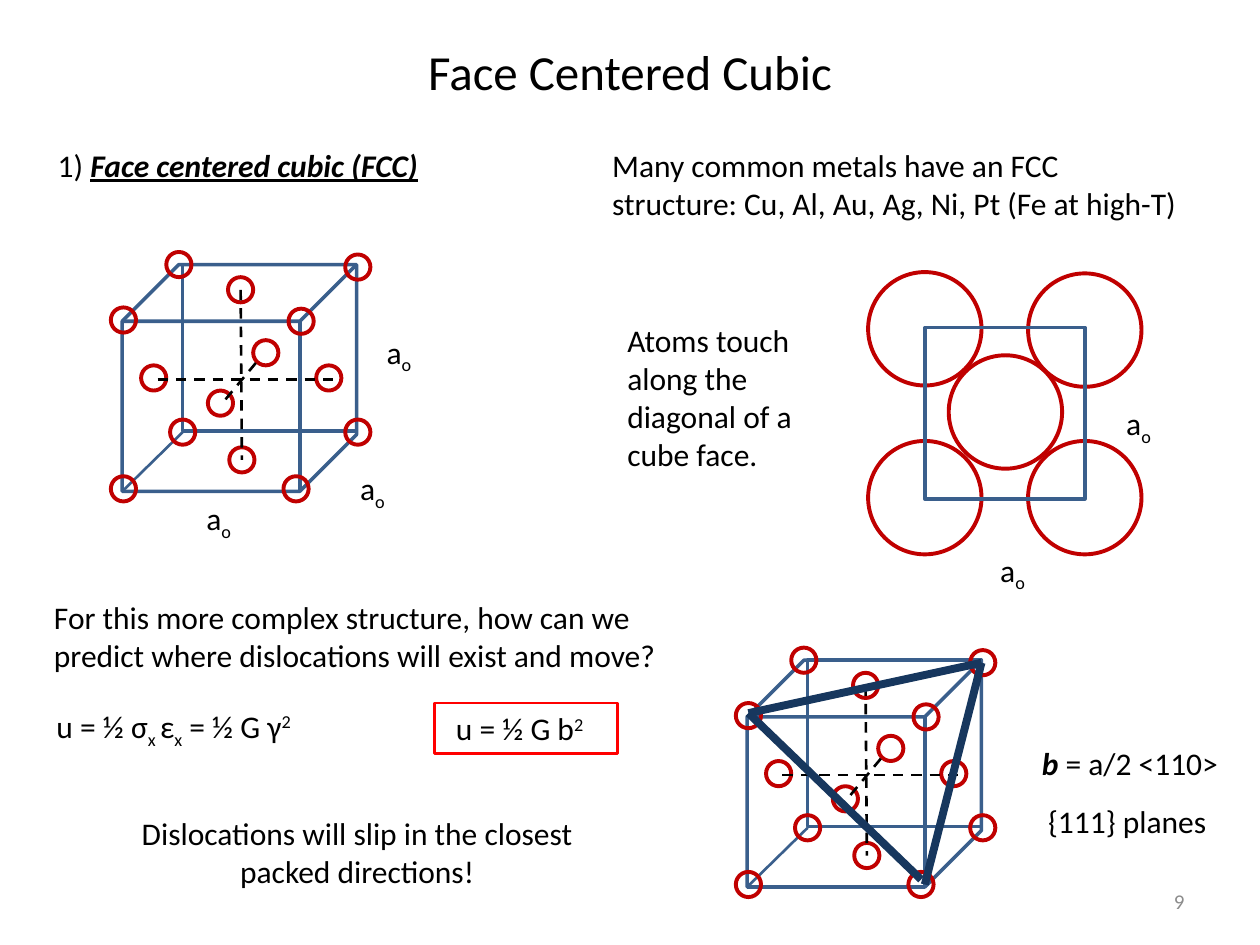
import pptx
import pptx.util
from pptx.dml.color import RGBColor
from pptx.enum.dml import MSO_LINE
from pptx.enum.shapes import MSO_CONNECTOR, MSO_SHAPE
from pptx.enum.text import MSO_ANCHOR, PP_ALIGN
from pptx.oxml.ns import qn
from lxml import etree

PX = 9144  # 100 px to the inch
BLACK = RGBColor(0x00, 0x00, 0x00)
GRAY = RGBColor(0x8C, 0x8C, 0x8C)
BLUE = RGBColor(0x3A, 0x5F, 0x8C)
NAVY = RGBColor(0x17, 0x37, 0x5E)
ATOM_RED = RGBColor(0xC0, 0x00, 0x00)
RED = RGBColor(0xFF, 0x00, 0x00)
CENTER = PP_ALIGN.CENTER
LINE = MSO_CONNECTOR.STRAIGHT
SUB, SUPER = {"baseline": -25000}, {"baseline": 30000}

deck = pptx.Presentation()
deck.slide_width, deck.slide_height = 1000 * PX, 750 * PX
page = deck.slides.add_slide(deck.slide_layouts[6])


def write(place, text, size=18, color=BLACK, align=PP_ALIGN.LEFT,
          anchor=MSO_ANCHOR.TOP, wrap=True, box=None, right=10):
    """Write a string, or a list of (string, format) pairs, into box or a new text box."""
    if box is None:
        box = page.shapes.add_textbox(*[n * PX for n in place])
    frame = box.text_frame
    frame.word_wrap, frame.vertical_anchor = wrap, anchor
    frame.margin_right = right * PX
    para = frame.paragraphs[0]
    para.alignment = align
    for words, form in [(text, {})] if isinstance(text, str) else text:
        span = para.add_run()
        span.text = words
        span.font.name, span.font.size = "Calibri", pptx.util.Pt(size)
        span.font.color.rgb = color
        for name in ("bold", "italic", "underline"):
            if name in form:
                setattr(span.font, name, form[name])
        if "baseline" in form:
            span._r.get_or_add_rPr().set("baseline", str(form["baseline"]))


def draw(shapes, kind, place, color, weight, dash=None):
    """Draw a line (x1, y1, x2, y2) or an unfilled shape (left, top, width, height)."""
    place = [n * PX for n in place]
    if kind is LINE:
        item = shapes.add_connector(kind, *place)
    else:
        item = shapes.add_shape(kind, *place)
        item.fill.background()
        item.shadow.inherit = False
    item.line.color.rgb = color
    item.line.width = pptx.util.Pt(weight)
    if dash:
        item.line.dash_style = dash
    if kind is LINE:
        etree.SubElement(item._element.spPr, qn("a:effectLst"))
    return item


write((0, 28, 1000, 57), "Face Centered Cubic", size=28, align=CENTER)
write((717, 695, 233, 40), "9", size=12, color=GRAY, align=PP_ALIGN.RIGHT,
      anchor=MSO_ANCHOR.MIDDLE)
write((36, 111, 309, 40),
      [("1) ", {}),
       ("Face centered cubic (FCC)", {"bold": True, "italic": True, "underline": True})],
      wrap=False)
write((476, 111, 475, 71),
      "Many common metals have an FCC structure: Cu, Al, Au, Ag, Ni, Pt (Fe at high-T)")

# Two equal unit cells: cube, atoms and dashed axes
ATOM = 20
atom_corners = [
    (132, 200), (274, 333), (88, 244), (274, 202), (165, 310), (182, 355), (88, 378),
    (201, 270), (135, 333), (112, 290), (181, 220), (225, 378), (251, 290), (229, 245),
]
axes = [(191, 230, 192, 365), (125, 301, 264, 301), (179, 317, 204, 287)]
for dx, dy in [(0, 0), (496, 314)]:
    cell = page.shapes.add_group_shape().shapes
    draw(cell, MSO_SHAPE.CUBE, (97 + dx, 210 + dy, 186, 180), BLUE, 2)
    draw(cell, MSO_SHAPE.RECTANGLE, (145 + dx, 210 + dy, 138, 132), BLUE, 2)
    draw(cell, LINE, (97 + dx, 390 + dy, 145 + dx, 343 + dy), BLUE, 1.5)
    for x, y in atom_corners:
        draw(page.shapes, MSO_SHAPE.OVAL, (x + dx, y + dy, ATOM, ATOM), ATOM_RED, 2.25)
    for x1, y1, x2, y2 in axes:
        draw(page.shapes, LINE, (x1 + dx, y1 + dy, x2 + dx, y2 + dy), BLACK, 1.5,
             dash=MSO_LINE.DASH)

# {111} plane in the second cell
for ends in [(594, 566, 731, 698), (779, 526, 734, 702), (779, 526, 594, 566)]:
    draw(page.shapes, LINE, ends, NAVY, 4.5)

# Cube face with touching atoms
for x, y in [(689, 216), (753, 282), (689, 350), (816, 350), (816, 217)]:
    draw(page.shapes, MSO_SHAPE.OVAL, (x, y, 90, 90), ATOM_RED, 2.25)
draw(page.shapes, MSO_SHAPE.RECTANGLE, (734, 260, 127, 136), BLUE, 2)
write((488, 250, 169, 131), "Atoms touch along the diagonal of a cube face.")

for x, y in [(276, 367), (297, 259), (154, 391), (884, 316), (784, 432)]:
    write((x, y, 43, 41), [("a", {}), ("o", SUB)])

# Energy argument
write((33, 470, 505, 71),
      "For this more complex structure, how can we predict where dislocations "
      "will exist and move?")
write((35, 556, 243, 40),
      [("u = ½ σ", {}), ("x ", SUB), ("ε", {}), ("x", SUB), (" = ½ G γ", {}), ("2", SUPER)])
energy_place = (345, 558, 145, 40)
energy_box = draw(page.shapes, MSO_SHAPE.RECTANGLE, energy_place, RED, 1.5)
write(energy_place, [("u = ½ G b", {}), ("2", SUPER)], align=CENTER, box=energy_box, right=20)
write((86, 641, 395, 71), "Dislocations will slip in the closest packed directions!",
      align=CENTER)
write((817, 586, 162, 40),
      [("b", {"bold": True, "italic": True}), (" = a/2 <110>", {})], wrap=False)
write((822, 632, 162, 40), "{111} planes")

deck.save("out.pptx")
